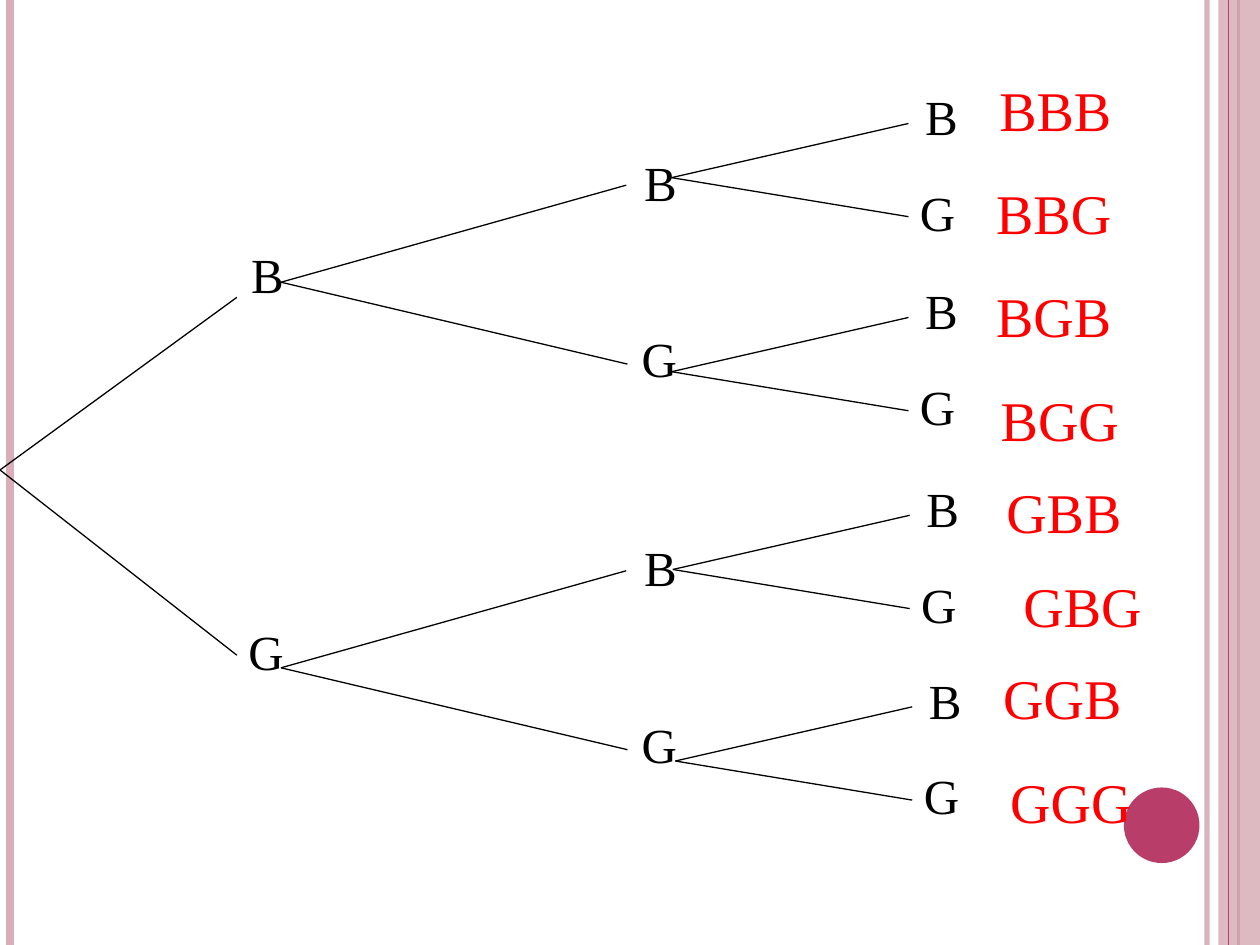
import pptx
import pptx.dml.color
import pptx.enum.shapes
import pptx.enum.text
import pptx.oxml.ns
import pptx.util
from lxml import etree
from pptx.util import Inches

COLORS = {"ink": "000000", "outcome": "FF0000", "rose": "D8AFB9", "berry": "B83D68"}
FONT = "Times New Roman"
FORKS = {
    "first": {"ends": [(1.88, -1.37), (1.88, 1.47)], "labels": [(1.85, -1.84), (1.83, 1.15)]},
    "second": {"ends": [(2.74, -0.77), (2.75, 0.65)], "labels": [(2.74, -1.08), (2.72, 0.32)]},
    "third": {"ends": [(1.88, -0.43), (1.88, 0.31)], "labels": [(1.87, -0.77), (1.83, -0.01)]},
}
APEXES = {
    "first": [(0, 3.73)],
    "second": [(2.23, 2.24), (2.23, 5.3)],
    "third": [(5.33, 1.41), (5.33, 2.95), (5.34, 4.52), (5.36, 6.04)],
}
OUTCOMES = [
    ("BBB", 7.82, 0.47, 1.1, 44),
    ("BBG", 7.79, 1.29, 1.13, 44),
    ("BGB", 7.79, 2.11, 1.13, 44),
    ("BGG", 7.83, 2.93, 1.15, 44),
    ("GBB", 7.87, 3.66, 1.13, 44),
    ("GBG", 7.83, 4.49, 1.33, None),
    ("GGB", 7.85, 5.22, 1.15, None),
    ("GGG", 7.91, 6.04, 1.17, None),
]


def rgb(name):
    """Return the named colour."""
    return pptx.dml.color.RGBColor.from_string(COLORS[name])


def set_opacity(fill, element, percent):
    """Give the solid colour within an element an opacity."""
    color = element.find(".//" + pptx.oxml.ns.qn("a:srgbClr"))
    etree.SubElement(color, pptx.oxml.ns.qn("a:alpha"), val=str(percent * 1000))


def add_line(slide, start, end, color="ink", width=0.75):
    """Draw a straight line between two points in inches."""
    line = slide.shapes.add_connector(
        pptx.enum.shapes.MSO_CONNECTOR.STRAIGHT, *map(Inches, start + end))
    line.line.color.rgb = rgb(color)
    line.line.width = pptx.util.Pt(width)
    etree.SubElement(line._element.spPr, pptx.oxml.ns.qn("a:effectLst"))
    return line


def add_block(slide, kind, left, top, width, height, color):
    """Draw a filled shape without an outline."""
    shape = slide.shapes.add_shape(kind, *map(Inches, (left, top, width, height)))
    shape.shadow.inherit = False
    shape.fill.solid()
    shape.fill.fore_color.rgb = rgb(color)
    shape.line.fill.background()
    return shape


def add_label(slide, text, left, top, width, height, size, color, spacing=None):
    """Write one right-aligned label."""
    box = slide.shapes.add_textbox(*map(Inches, (left, top, width, height)))
    box.text_frame.word_wrap = False
    box.text_frame.text = text
    paragraph = box.text_frame.paragraphs[0]
    paragraph.alignment = pptx.enum.text.PP_ALIGN.RIGHT
    if spacing:
        paragraph.line_spacing = pptx.util.Pt(spacing)
    font = paragraph.runs[0].font
    font.name = FONT
    font.size = pptx.util.Pt(size)
    font.color.rgb = rgb(color)


def add_frame(slide, width, height):
    """Draw the side rails and the dot at the slide edges."""
    shapes = pptx.enum.shapes.MSO_SHAPE

    def rail(x, color, weight):
        """Draw a rail of full height."""
        return add_line(slide, (x, 0), (x, height), color, weight)

    inner = rail(width - 0.42, "rose", 3)
    set_opacity(inner.line.fill, inner._element.spPr, 93)
    rail(0.08, "rose", 4.5)
    rail(width - 0.17, "berry", 1.5)
    band = add_block(slide, shapes.RECTANGLE, width - 0.33, 0, 0.33, height, "rose")
    set_opacity(band.fill, band._element.spPr, 87)
    rail(width - 0.25, "berry", 0.75)
    add_block(slide, shapes.OVAL, width - 1.08, height - 1.25, 0.6, 0.6, "berry")


def add_fork(slide, left, top, fork):
    """Draw two branches from an apex, ending in B and G."""
    for letter, width, end, label in zip("BG", (0.5, 0.52), fork["ends"], fork["labels"]):
        add_line(slide, (left, top), (left + end[0], top + end[1]))
        add_label(slide, letter, left + label[0], top + label[1], width, 0.63, 28, "ink")


def add_tree(slide, left, top):
    """Draw every level of the tree from its apexes."""
    for level, apexes in APEXES.items():
        for x, y in apexes:
            add_fork(slide, left + x, top + y, FORKS[level])


def add_outcomes(slide, left, top):
    """Write the outcome beside each final branch."""
    for text, x, y, width, spacing in OUTCOMES:
        height = 0.79 if spacing else 0.7
        add_label(slide, text, left + x, top + y, width, height, 32, "outcome", spacing)


def main():
    """Build and save the presentation."""
    presentation = pptx.Presentation()
    presentation.slide_width = Inches(10)
    presentation.slide_height = Inches(7.5)
    slide = presentation.slides.add_slide(presentation.slide_layouts[6])
    add_frame(slide, 10, 7.5)
    add_tree(slide, 0, 0)
    add_outcomes(slide, 0, 0)
    presentation.save("out.pptx")


if __name__ == "__main__":
    main()
